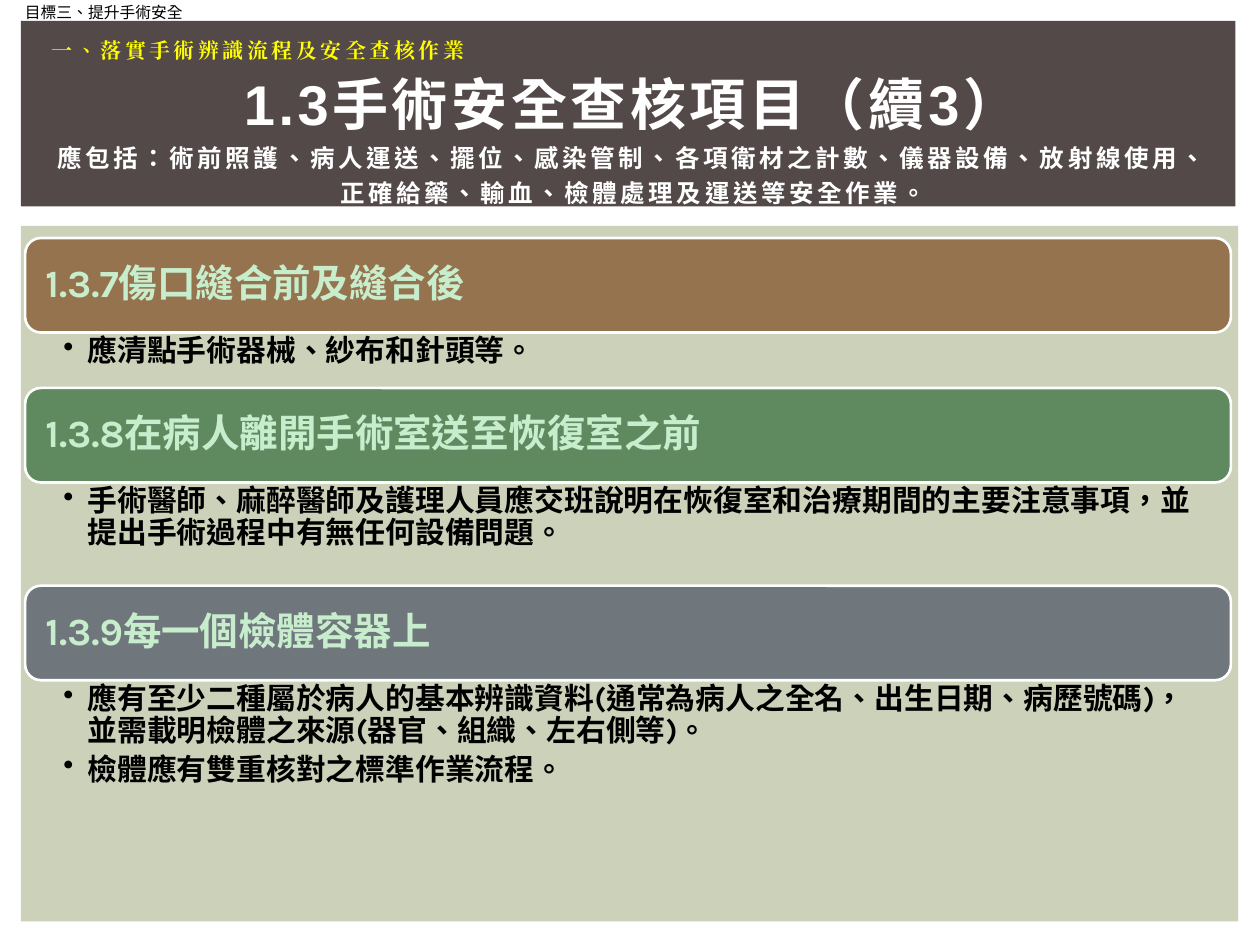
from copy import deepcopy

from lxml import etree
from pptx import Presentation
from pptx.dml.color import RGBColor
from pptx.enum.shapes import MSO_SHAPE
from pptx.enum.text import MSO_ANCHOR, MSO_AUTO_SIZE, PP_ALIGN
from pptx.oxml.ns import qn
from pptx.util import Pt

RECT, ROUNDED = MSO_SHAPE.RECTANGLE, MSO_SHAPE.ROUNDED_RECTANGLE
TOP, MIDDLE = MSO_ANCHOR.TOP, MSO_ANCHOR.MIDDLE
LEFT, CENTER = PP_ALIGN.LEFT, PP_ALIGN.CENTER

# Content
GOAL = "目標三、提升手術安全"
SECTION = "一、落實手術辨識流程及安全查核作業"
HEADING = "1.3手術安全查核項目（續3）"
SCOPE = [
    "應包括：術前照護、病人運送、擺位、感染管制、各項衛材之計數、儀器設備、放射線使用、",
    "正確給藥、輸血、檢體處理及運送等安全作業。",
]
# (bar colour, bar title, list height, list items)
CHECKS = [
    ("brown", "1.3.7傷口縫合前及縫合後", 31.7, ["應清點手術器械、紗布和針頭等。"]),
    ("green", "1.3.8在病人離開手術室送至恢復室之前", 59,
     ["手術醫師、麻醉醫師及護理人員應交班說明在恢復室和治療期間的主要注意事項，並提出手術過程中有無任何設備問題。"]),
    ("slate", "1.3.9每一個檢體容器上", 90,
     ["應有至少二種屬於病人的基本辨識資料(通常為病人之全名、出生日期、病歷號碼)，並需載明檢體之來源(器官、組織、左右側等)。",
      "檢體應有雙重核對之標準作業流程。"]),
]

# Format
COLORS = {
    "white": "FFFFFF", "black": "000000", "yellow": "FFFF00", "mint": "C7EDCC",
    "panel": "CCD1B9", "band": "534949",
    "brown": "94734E", "green": "5F895E", "slate": "6F777D",
}
STYLES = {
    "goal": dict(font="Noto Sans CJK SC", size=9, color="black", bold=False),
    "section": dict(font="Times New Roman", size=12, color="yellow", bold=True, spacing=2),
    "heading": dict(font="Arial", size=32, color="white", bold=True, spacing=2),
    "scope": dict(font="Arial", size=14, color="white", bold=True, spacing=2),
    "bar": dict(font="Karla", size=22, color="mint", bold=True),
    "item": dict(font="Karla", size=17, color="black", bold=True),
}
CHECK_LEFT, CHECK_TOP, CHECK_WIDTH, BAR_HEIGHT = 14.4, 136, 689, 54
BULLET_INDENT = 13.7


def rgb(name):
    return RGBColor.from_string(COLORS[name])


def add_run(paragraph, text, style):
    run = paragraph.add_run()
    run.text = text
    values = {"name": style["font"], "size": Pt(style["size"]), "bold": style["bold"]}
    for attribute, value in values.items():
        setattr(run.font, attribute, value)
    run.font.color.rgb = rgb(style["color"])
    properties = run.font._rPr
    properties.set("lang", "zh-TW")
    if "spacing" in style:
        properties.set("spc", str(style["spacing"] * 100))
    etree.SubElement(properties, qn("a:ea")).set("typeface", style["font"])
    return run


def add_break(paragraph, run):
    """Break the line, keeping the format of the run before it."""
    paragraph.add_line_break()
    paragraph._p[-1].append(deepcopy(run.font._rPr))


def set_frame(frame, margins=(7.2, 3.6, 7.2, 3.6), anchor=MIDDLE, wrap=True):
    sides = ("margin_left", "margin_top", "margin_right", "margin_bottom")
    values = dict(zip(sides, map(Pt, margins)))
    values.update(word_wrap=wrap, auto_size=MSO_AUTO_SIZE.NONE, vertical_anchor=anchor)
    for attribute, value in values.items():
        setattr(frame, attribute, value)


def set_paragraph(paragraph, **values):
    for attribute, value in values.items():
        setattr(paragraph, attribute, value)


def add_bullet(paragraph):
    properties = paragraph._p.get_or_add_pPr()
    properties.set("marL", str(Pt(BULLET_INDENT)))
    properties.set("indent", str(-Pt(BULLET_INDENT)))
    etree.SubElement(properties, qn("a:buChar")).set("char", "•")


def add_block(slide, preset, box, fill, line=None):
    block = slide.shapes.add_shape(preset, *map(Pt, box))
    block.shadow.inherit = False
    block.fill.solid()
    block.fill.fore_color.rgb = rgb(fill)
    if line:
        block.line.color.rgb = rgb(line)
        block.line.width = Pt(1.5)
    else:
        block.line.fill.background()
    return block


def add_text(slide, box, **frame_format):
    frame = slide.shapes.add_textbox(*map(Pt, box)).text_frame
    set_frame(frame, **frame_format)
    return frame


def add_check(slide, top, color, title, list_height, items):
    bar = add_block(slide, ROUNDED, (CHECK_LEFT, top, CHECK_WIDTH, BAR_HEIGHT), color, "white")
    set_frame(bar.text_frame, margins=(9, 6.5, 9, 6.5))
    paragraph = bar.text_frame.paragraphs[0]
    set_paragraph(paragraph, alignment=LEFT, line_spacing=0.9)
    add_run(paragraph, title, STYLES["bar"])

    frame = add_text(slide, (CHECK_LEFT, top + BAR_HEIGHT, CHECK_WIDTH, list_height),
                     margins=(21.9, 2, 12.2, 2), anchor=TOP)
    for index, item in enumerate(items):
        paragraph = frame.add_paragraph() if index else frame.paragraphs[0]
        set_paragraph(paragraph, line_spacing=0.9, space_after=Pt(3.6))
        add_bullet(paragraph)
        add_run(paragraph, item, STYLES["item"])


def main():
    presentation = Presentation()
    presentation.slide_width, presentation.slide_height = Pt(720), Pt(540)
    slide = presentation.slides.add_slide(presentation.slide_layouts[5])
    slide.background.fill.solid()
    slide.background.fill.fore_color.rgb = rgb("white")

    # Panel and header band
    add_block(slide, RECT, (12, 129, 695.5, 397.5), "panel")
    add_block(slide, RECT, (12, 12, 694, 106), "band")

    # Goal label
    goal = add_text(slide, (7.2, -2, 105, 18), wrap=False)
    add_run(goal.paragraphs[0], GOAL, STYLES["goal"])

    # Title, brought in front of the band
    title = slide.shapes.title
    slide.shapes._spTree.append(title._element)
    title.left, title.top, title.width, title.height = map(Pt, (14.4, 34, 695, 83))
    set_frame(title.text_frame)
    paragraph = title.text_frame.paragraphs[0]
    set_paragraph(paragraph, alignment=CENTER, line_spacing=1.2)
    run = add_run(paragraph, HEADING, STYLES["heading"])
    for line in SCOPE:
        add_break(paragraph, run)
        run = add_run(paragraph, line, STYLES["scope"])

    # Checks, stacked from the top
    top = CHECK_TOP
    for color, check, list_height, items in CHECKS:
        add_check(slide, top, color, check, list_height, items)
        top += BAR_HEIGHT + list_height

    # Section line
    section = add_text(slide, (14.4, 9.4, 266.4, 28)).paragraphs[0]
    set_paragraph(section, alignment=CENTER, line_spacing=1.76)
    add_run(section, SECTION, STYLES["section"])

    presentation.save("out.pptx")


if __name__ == "__main__":
    main()
